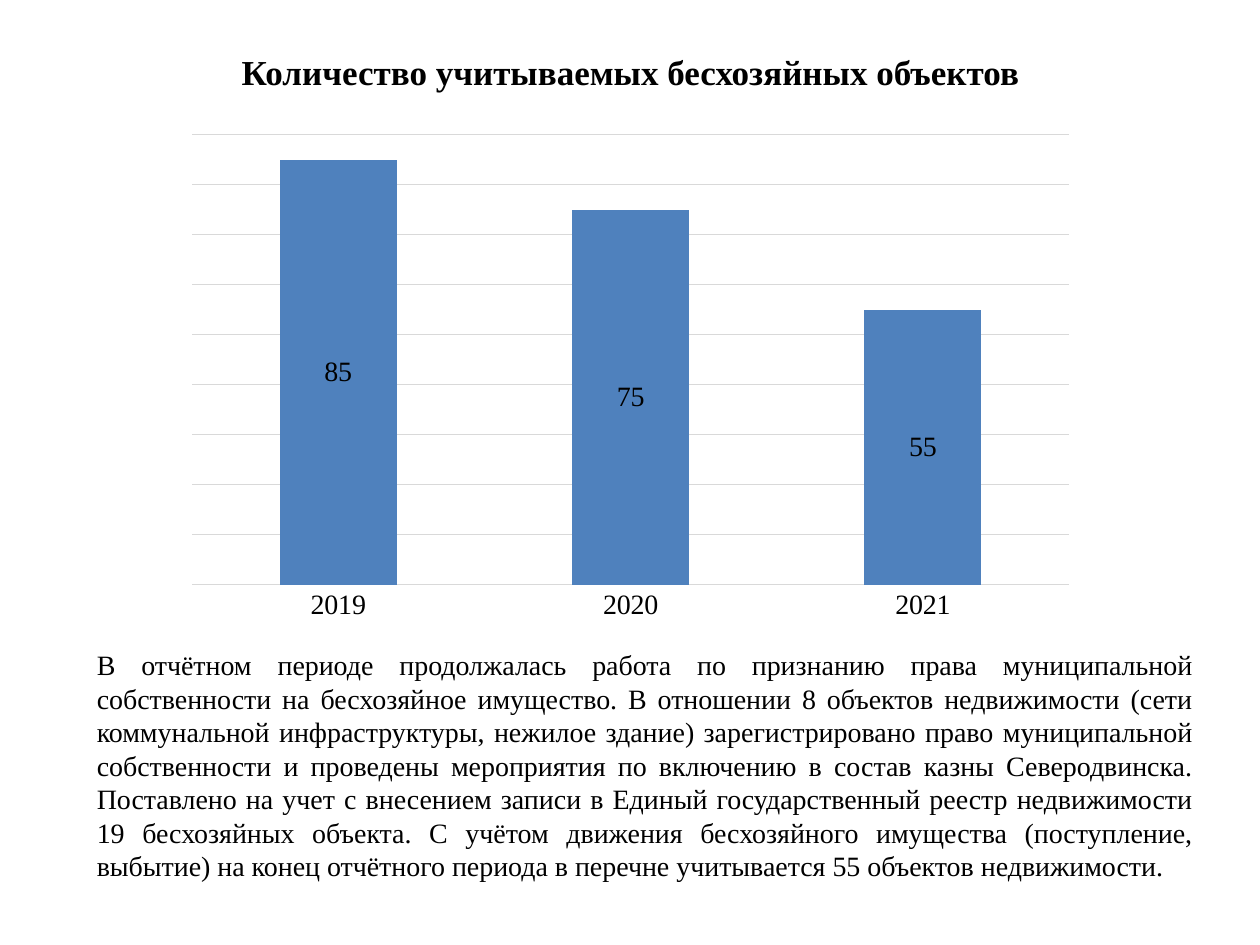
from pptx import Presentation
from pptx.chart.data import CategoryChartData
from pptx.dml.color import RGBColor
from pptx.enum.chart import XL_CHART_TYPE, XL_LABEL_POSITION, XL_TICK_MARK
from pptx.enum.text import MSO_ANCHOR, PP_ALIGN
from pptx.util import Inches, Pt

COLORS = {"text": "000000", "bar": "4F81BD", "grid": "D9D9D9"}
FONT = "Times New Roman"
TITLE = "Количество учитываемых бесхозяйных объектов"
BODY = (
    "В отчётном периоде продолжалась работа по признанию права муниципальной "
    "собственности на бесхозяйное имущество. В отношении 8 объектов недвижимости "
    "(сети коммунальной инфраструктуры, нежилое здание) зарегистрировано право "
    "муниципальной собственности и проведены мероприятия по включению в состав "
    "казны Северодвинска. Поставлено на учет с внесением записи в Единый "
    "государственный реестр недвижимости 19 бесхозяйных объекта. С учётом движения "
    "бесхозяйного имущества (поступление, выбытие) на конец отчётного периода "
    "в перечне учитывается 55 объектов недвижимости."
)
COUNTS = {"2019": 85, "2020": 75, "2021": 55}


def color(name):
    return RGBColor.from_string(COLORS[name])


def style(font, size, bold=False, face=FONT):
    font.name = face
    font.size = Pt(size)
    font.bold = bold
    font.color.rgb = color("text")


def add_text(slide, box, text, size, align, anchor=MSO_ANCHOR.TOP, bold=False, before=0):
    frame = slide.shapes.add_textbox(*map(Inches, box)).text_frame
    frame.word_wrap = True
    frame.vertical_anchor = anchor
    para = frame.paragraphs[0]
    para.alignment = align
    para.space_before = Pt(before)
    run = para.add_run()
    run.text = text
    style(run.font, size, bold)


def add_bars(slide, box, counts):
    data = CategoryChartData()
    data.categories = list(counts)
    data.add_series("Series 1", list(counts.values()))
    chart = slide.shapes.add_chart(
        XL_CHART_TYPE.COLUMN_STACKED, *map(Inches, box), data
    ).chart
    chart.has_title = False
    chart.has_legend = False
    style(chart.font, 10, face="Calibri")

    years = chart.category_axis
    years.major_tick_mark = XL_TICK_MARK.NONE
    years.minor_tick_mark = XL_TICK_MARK.NONE
    years.format.line.fill.background()
    style(years.tick_labels.font, 16)

    scale = chart.value_axis
    scale.visible = False
    scale.minimum_scale = 0
    scale.maximum_scale = 90
    scale.major_unit = 10
    scale.has_major_gridlines = True
    grid = scale.major_gridlines.format.line
    grid.color.rgb = color("grid")
    grid.width = Pt(0.75)

    plot = chart.plots[0]
    plot.gap_width = 150
    plot.overlap = 100
    plot.vary_by_categories = False
    fill = plot.series[0].format.fill
    fill.solid()
    fill.fore_color.rgb = color("bar")
    labels = plot.series[0].data_labels
    labels.show_value = True
    labels.position = XL_LABEL_POSITION.CENTER
    style(labels.font, 16)


def main():
    deck = Presentation()
    deck.slide_width = Inches(10)
    deck.slide_height = Inches(7.5)
    slide = deck.slides.add_slide(deck.slide_layouts[6])
    add_text(slide, (0.51, 0.3, 8.99, 0.54), TITLE, 20, PP_ALIGN.CENTER,
             MSO_ANCHOR.MIDDLE, bold=True)
    add_text(slide, (0.67, 5.09, 8.9, 1.97), BODY, 16, PP_ALIGN.JUSTIFY, before=3.2)
    add_bars(slide, (1.38, 0.99, 7.25, 4.02), COUNTS)
    deck.save("out.pptx")


if __name__ == "__main__":
    main()
